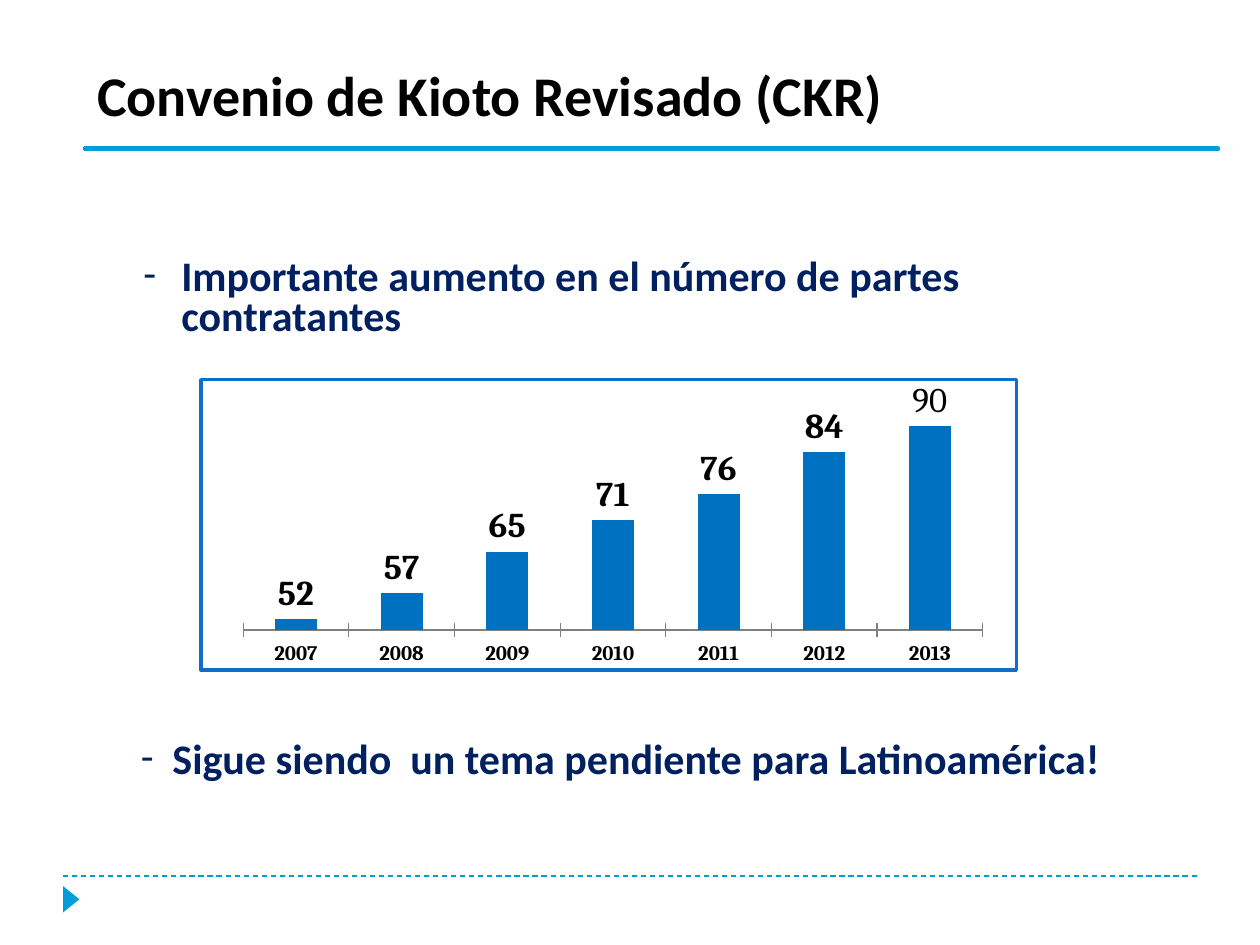
from dataclasses import dataclass

from lxml import etree
from pptx import Presentation
from pptx import util as u
from pptx.chart.data import CategoryChartData
from pptx.dml.color import RGBColor
from pptx.enum import chart as charts
from pptx.enum import dml, shapes, text
from pptx.oxml import parse_xml
from pptx.oxml.ns import nsdecls, qn

WIDTH, HEIGHT = 10, 7.5
BLACK = RGBColor(0x00, 0x00, 0x00)
CYAN = RGBColor(0x00, 0x9D, 0xD9)
NAVY = RGBColor(0x00, 0x20, 0x60)
BLUE = RGBColor(0x00, 0x70, 0xC0)
BORDER = RGBColor(0x0F, 0x6F, 0xC6)
GREY = RGBColor(0x80, 0x80, 0x80)


@dataclass
class Box:
    """Left, top, width and height as shares of the slide."""
    x: float
    y: float
    w: float
    h: float

    def lengths(self) -> tuple:
        return (u.Inches(self.x * WIDTH), u.Inches(self.y * HEIGHT),
                u.Inches(self.w * WIDTH), u.Inches(self.h * HEIGHT))


@dataclass
class Bullet:
    words: str
    margin: float
    hang: float
    before: int


TITLE = Box(0.067, 0.077, 0.9, 0.117)
RULE = Box(0.067, 0.156, 0.9, 0.0027)
BODY = Box(0.042, 0.2, 0.958, 0.64)
CHART = Box(0.158, 0.4, 0.65, 0.311)
FOOTER = Box(0.05, 0.927, 0.9, 0)
MARKER = Box(0.046, 0.943, 0.021, 0.0173)

BULLETS = [
    Bullet("Importante aumento en el número de partes contratantes", 0.92, 0.3, 0),
    Bullet("Sigue siendo  un tema pendiente para Latinoamérica!", 0.85, 0.25, 230),
]
PARTIES = {"2007": 52, "2008": 57, "2009": 65, "2010": 71,
           "2011": 76, "2012": 84, "2013": 89}


def write(p, words: str, *, size: float, color: RGBColor, font: str = "Calibri",
          bold: bool = True, spacing: float = None, before: float = 0):
    r = p.add_run()
    r.text = words
    r.font.name, r.font.size, r.font.bold = font, u.Pt(size), bold
    r.font.color.rgb = color
    p.alignment = text.PP_ALIGN.LEFT
    p.space_before = u.Pt(before)
    if spacing:
        p.line_spacing = u.Pt(spacing)


def add_solid(slide, kind, box: Box, rotation: float = 0, line: float = 0):
    sp = slide.shapes.add_shape(kind, *box.lengths())
    sp.shadow.inherit = False
    sp.rotation = rotation
    sp.fill.solid()
    sp.fill.fore_color.rgb = CYAN
    if line:
        sp.line.color.rgb = CYAN
        sp.line.width = u.Pt(line)
    else:
        sp.line.fill.background()


def add_footer_line(slide, box: Box):
    x, y, w, _ = box.lengths()
    line = slide.shapes.add_connector(shapes.MSO_CONNECTOR.STRAIGHT, x, y, x + w, y)
    line.line.color.rgb = CYAN
    line.line.width = u.Pt(0.75)
    line.line.dash_style = dml.MSO_LINE.DASH
    etree.SubElement(line._element.spPr, qn("a:effectLst"))


def set_title(slide, words: str, box: Box):
    sp = slide.shapes.title
    sp.left, sp.top, sp.width, sp.height = box.lengths()
    tf = sp.text_frame
    tf.word_wrap = True
    tf.auto_size = text.MSO_AUTO_SIZE.NONE
    tf.vertical_anchor = text.MSO_ANCHOR.TOP
    write(tf.paragraphs[0], words, size=32, color=BLACK, spacing=28)


def add_bullets(slide, bullets: list[Bullet], box: Box):
    tf = slide.shapes.add_textbox(*box.lengths()).text_frame
    tf.word_wrap = True
    tf.margin_top, tf.margin_right = u.Inches(0.56), u.Inches(0.8)
    for i, bullet in enumerate(bullets):
        p = tf.add_paragraph() if i else tf.paragraphs[0]
        write(p, bullet.words, size=24, color=NAVY, spacing=23, before=bullet.before)
        pPr = p._p.get_or_add_pPr()
        pPr.set("marL", str(u.Inches(bullet.margin)))
        pPr.set("indent", str(-u.Inches(bullet.hang)))
        etree.SubElement(pPr, qn("a:buFont")).set("typeface", "Calibri")
        etree.SubElement(pPr, qn("a:buChar")).set("char", "-")


def add_column_chart(slide, values: dict[str, int], box: Box):
    data = CategoryChartData()
    data.categories = list(values)
    data.add_series("Series 1", list(values.values()))
    chart = slide.shapes.add_chart(
        charts.XL_CHART_TYPE.COLUMN_CLUSTERED, *box.lengths(), data).chart
    chart.has_legend = chart.has_title = False
    chart.font.name, chart.font.size, chart.font.bold = "Cambria", u.Pt(12), True
    chart.font.color.rgb = BLACK

    # Axes
    value_axis, category_axis = chart.value_axis, chart.category_axis
    value_axis.minimum_scale, value_axis.maximum_scale = 50, 90
    value_axis.has_major_gridlines = False
    value_axis.visible = False
    category_axis.major_tick_mark = charts.XL_TICK_MARK.CROSS
    category_axis.format.line.color.rgb = GREY

    # Columns and their labels
    plot = chart.plots[0]
    plot.gap_width = 150
    plot.vary_by_categories = False
    series = plot.series[0]
    series.format.fill.solid()
    series.format.fill.fore_color.rgb = BLUE
    labels = series.data_labels
    labels.show_value = True
    labels.position = charts.XL_LABEL_POSITION.OUTSIDE_END
    labels.font.name, labels.font.size, labels.font.bold = "Cambria", u.Pt(20), True
    labels.font.color.rgb = BLACK
    last = series.points[len(values) - 1].data_label
    write(last.text_frame.paragraphs[0], "90", size=20, color=BLACK,
          font="Cambria", bold=False)
    last.position = charts.XL_LABEL_POSITION.OUTSIDE_END

    # Inner plot area and chart border
    space = chart._chartSpace
    area = space.find(".//" + qn("c:plotArea"))
    for layout in area.findall(qn("c:layout")):
        area.remove(layout)
    area.insert(0, parse_xml(
        f'<c:layout {nsdecls("c")}><c:manualLayout><c:layoutTarget val="inner"/>'
        '<c:xMode val="edge"/><c:yMode val="edge"/><c:x val="0.052"/>'
        '<c:y val="0.143"/><c:w val="0.907"/><c:h val="0.719"/>'
        '</c:manualLayout></c:layout>'))
    space.find(qn("c:txPr")).addprevious(parse_xml(
        f'<c:spPr {nsdecls("c", "a")}><a:noFill/><a:ln w="{u.Pt(2)}"><a:solidFill>'
        f'<a:srgbClr val="{BORDER}"/></a:solidFill></a:ln></c:spPr>'))


def main():
    prs = Presentation()
    prs.slide_width, prs.slide_height = u.Inches(WIDTH), u.Inches(HEIGHT)
    slide = prs.slides.add_slide(prs.slide_layouts[5])

    # Footer
    add_footer_line(slide, FOOTER)
    add_solid(slide, shapes.MSO_SHAPE.ISOSCELES_TRIANGLE, MARKER, rotation=90)

    # Title and content
    set_title(slide, "Convenio de Kioto Revisado (CKR)", TITLE)
    add_bullets(slide, BULLETS, BODY)
    add_column_chart(slide, PARTIES, CHART)
    add_solid(slide, shapes.MSO_SHAPE.RECTANGLE, RULE, line=1.5)

    prs.save("out.pptx")


if __name__ == "__main__":
    main()
